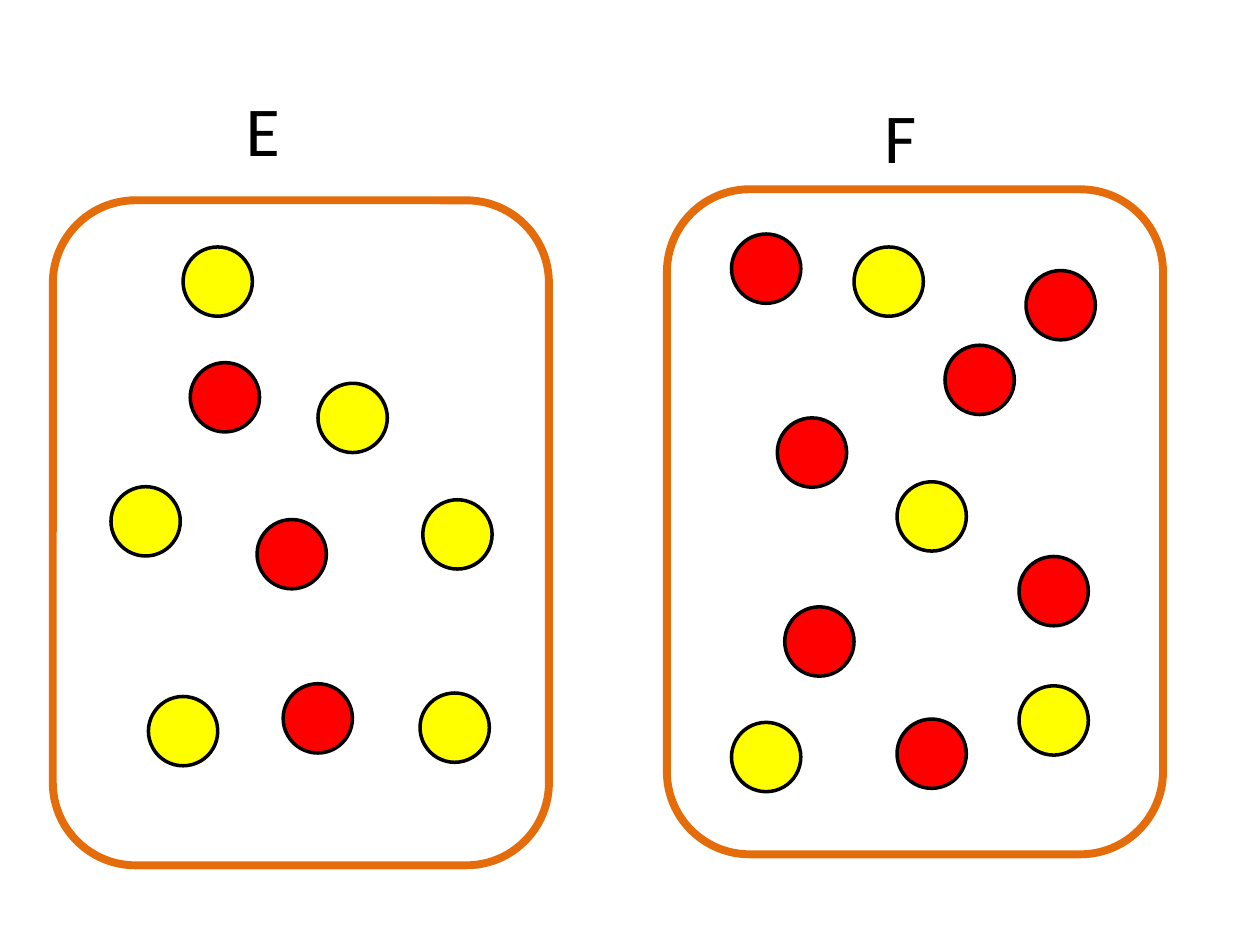
from pptx import Presentation
from pptx.dml.color import RGBColor
from pptx.enum.shapes import MSO_SHAPE
from pptx.enum.text import MSO_AUTO_SIZE
from pptx.util import Pt

COLORS = {
    "red": "FF0000",
    "yellow": "FFFF00",
    "white": "FFFFFF",
    "orange": "E46C0A",
    "black": "000000",
}
BAG_WIDTH, BAG_HEIGHT = 283.5, 380
COUNTER_SIZE = 39.6

BAGS = [
    {
        "letter": "F",
        "corner": (381.1, 108.2),
        "label": (498.2, 49.7),
        "red": [(444.2, 238.8), (448.4, 346.8), (418, 133.7), (586.3, 154.6),
                (512.6, 410.9), (582.3, 318), (540, 197.3)],
        "yellow": [(418, 412.8), (512.6, 275.3), (582.3, 391.9), (488, 141.1)],
    },
    {
        "letter": "E",
        "corner": (30.2, 114.5),
        "label": (133.2, 45.7),
        "red": [(108.7, 207.2), (161.8, 390.7), (146.9, 296.9)],
        "yellow": [(181.7, 219), (63.4, 278.1), (240, 396), (84.8, 398),
                   (241.6, 285.6), (104.6, 141.1)],
    },
]


def add_outlined(group, kind, corner, width, height, fill, line, weight):
    left, top = corner
    shape = group.shapes.add_shape(kind, Pt(left), Pt(top), Pt(width), Pt(height))
    shape.shadow.inherit = False
    shape.fill.solid()
    shape.fill.fore_color.rgb = RGBColor.from_string(COLORS[fill])
    shape.line.color.rgb = RGBColor.from_string(COLORS[line])
    shape.line.width = Pt(weight)


deck = Presentation()
deck.slide_width, deck.slide_height = Pt(720), Pt(540)
page = deck.slides.add_slide(deck.slide_layouts[6])

for bag in BAGS:
    group = page.shapes.add_group_shape()
    add_outlined(group, MSO_SHAPE.ROUNDED_RECTANGLE, bag["corner"],
                 BAG_WIDTH, BAG_HEIGHT, "white", "orange", 4.5)
    for color in ("red", "yellow"):
        for corner in bag[color]:
            add_outlined(group, MSO_SHAPE.OVAL, corner,
                         COUNTER_SIZE, COUNTER_SIZE, color, "black", 2)

for bag in reversed(BAGS):
    left, top = bag["label"]
    box = page.shapes.add_textbox(Pt(left), Pt(top), Pt(41.8), Pt(55.4))
    frame = box.text_frame
    frame.word_wrap = True
    frame.auto_size = MSO_AUTO_SIZE.SHAPE_TO_FIT_TEXT
    para = frame.paragraphs[0]
    para.text = bag["letter"]
    para.font.name = "Calibri"
    para.font.size = Pt(40)
    para.font.color.rgb = RGBColor.from_string(COLORS["black"])

deck.save("out.pptx")
